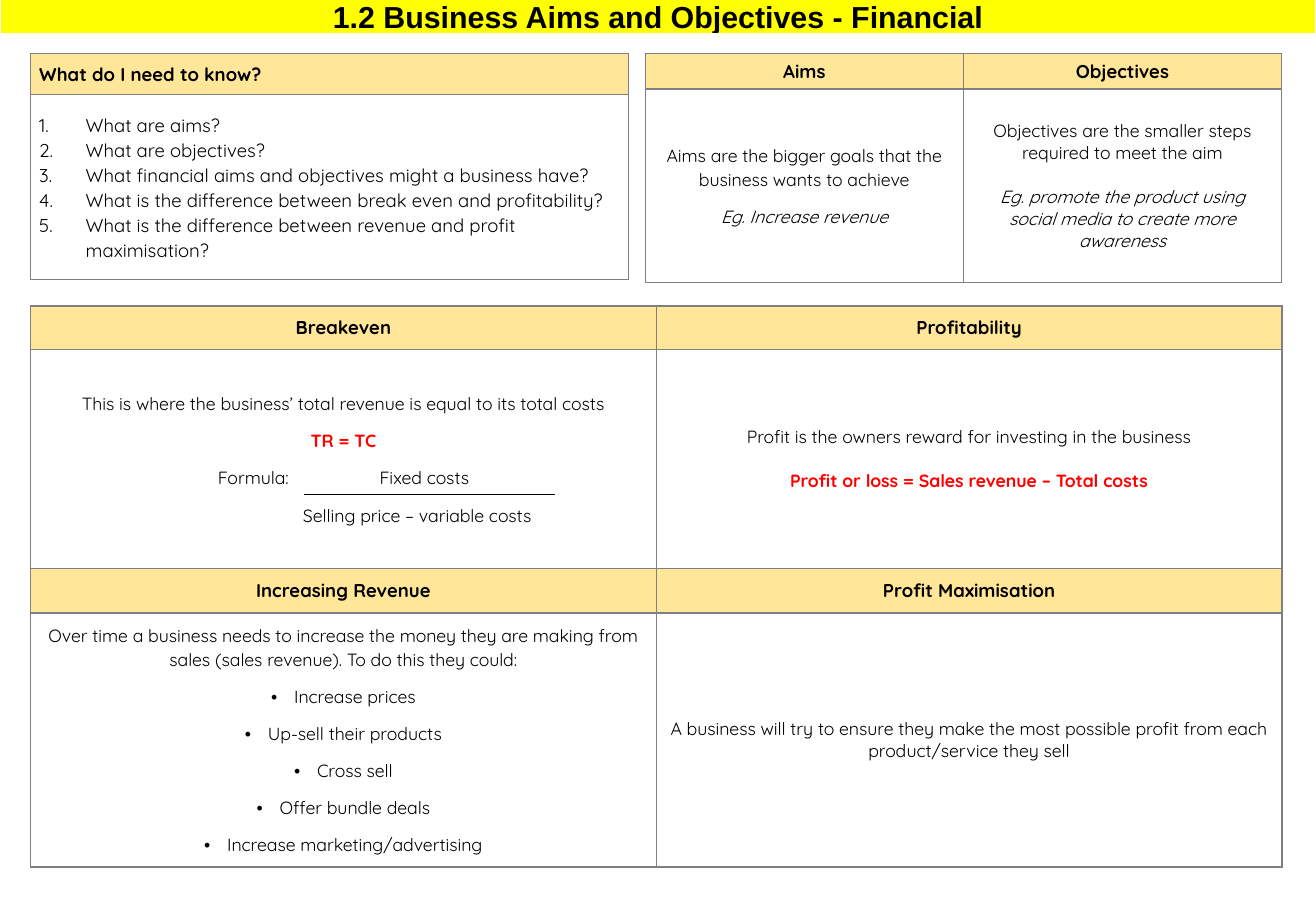
from dataclasses import dataclass

from lxml.etree import SubElement
from pptx import Presentation
from pptx.dml.color import RGBColor
from pptx.enum.shapes import MSO_CONNECTOR
from pptx.enum.text import MSO_ANCHOR as Anchor, PP_ALIGN as Align
from pptx.oxml.ns import qn
from pptx.util import Cm, Pt


@dataclass(frozen=True)
class Theme:
    black: RGBColor = RGBColor(0, 0, 0)
    white: RGBColor = RGBColor(255, 255, 255)
    red: RGBColor = RGBColor(255, 0, 0)
    yellow: RGBColor = RGBColor(255, 255, 0)
    header: RGBColor = RGBColor(0xFF, 0xE6, 0x99)
    border: RGBColor = RGBColor(128, 128, 128)
    title_font: str = "Arial"
    font: str = "Quicksand"
    title_size: float = 18
    heading_size: float = 11
    body_size: float = 10.5


THEME = Theme()
LOOSE = {"line_spacing": 1.07, "after": 8}
BLANK_LINE = 13
LEFT = Cm(0.64)
TOP = Cm(1.12)


def add_text(cell, text, *, size=THEME.body_size, font=THEME.font, color=THEME.black,
             bold=False, italic=False, align=Align.CENTER, line_spacing=1.0, after=0,
             bullet=None, hanging=0, tabs=()):
    """Fill the cell's empty first paragraph, or add another one."""
    frame = cell.text_frame
    paragraph = frame.paragraphs[0]
    if paragraph.runs:
        paragraph = frame.add_paragraph()
    paragraph.alignment = align
    paragraph.line_spacing = line_spacing
    paragraph.space_before = Pt(0)
    paragraph.space_after = Pt(after)

    run = paragraph.add_run()
    run.text = text
    run.font.name = font
    run.font.size = Pt(size)
    run.font.bold = bold
    run.font.italic = italic
    run.font.color.rgb = color

    properties = paragraph._p.get_or_add_pPr()
    if bullet:
        properties.set("marL", str(Cm(hanging)))
        properties.set("indent", str(-Cm(hanging)))
        if bullet == "number":
            SubElement(properties, qn("a:buAutoNum"), type="arabicPeriod")
        else:
            SubElement(properties, qn("a:buFont"), typeface="Arial")
            SubElement(properties, qn("a:buChar"), char=bullet)
    if tabs:
        tab_list = SubElement(properties, qn("a:tabLst"))
        for position in tabs:
            SubElement(tab_list, qn("a:tab"), pos=str(Cm(position)), algn="l")


def set_borders(cell, color, bottom_width=1):
    properties = cell._tc.get_or_add_tcPr()
    for side in "LRTB":
        width = bottom_width if side == "B" else 1
        line = SubElement(properties, qn(f"a:ln{side}"), w=str(Pt(width)))
        fill = SubElement(line, qn("a:solidFill"))
        SubElement(fill, qn("a:srgbClr"), val=str(color))


def add_grid(slide, left, top, columns, rows, *, tight=False,
             border=THEME.border, bottom_width=1):
    """Add a bordered table without fills; column and row sizes are in centimetres."""
    table = slide.shapes.add_table(len(rows), len(columns), left, top,
                                   Cm(sum(columns)), Cm(sum(rows))).table
    table.first_row = False
    table.horz_banding = False
    for column, width in zip(table.columns, columns):
        column.width = Cm(width)
    for row, height in zip(table.rows, rows):
        row.height = Cm(height)
    for cell in table.iter_cells():
        cell.vertical_anchor = Anchor.MIDDLE
        if tight:
            cell.margin_left = cell.margin_right = Cm(0.18)
            cell.margin_top = cell.margin_bottom = 0
        set_borders(cell, border, bottom_width)
        cell.fill.background()
    return table


def fill_cell(cell, color):
    cell.fill.solid()
    cell.fill.fore_color.rgb = color


def add_heading(cell, text, **text_format):
    fill_cell(cell, THEME.header)
    add_text(cell, text, size=THEME.heading_size, bold=True, **text_format)


def add_title(slide):
    table = add_grid(slide, 0, Cm(-0.03), [27.51], [0.64], tight=True,
                     border=THEME.white, bottom_width=3)
    cell = table.cell(0, 0)
    cell.vertical_anchor = Anchor.TOP
    fill_cell(cell, THEME.yellow)
    add_text(cell, "1.2 Business Aims and Objectives - Financial", font=THEME.title_font,
             size=THEME.title_size, bold=True, line_spacing=1.07)


def add_questions(slide):
    table = add_grid(slide, LEFT, TOP, [12.5], [0.86, 3.86], tight=True)
    add_heading(table.cell(0, 0), "What do I need to know?", align=Align.LEFT,
                line_spacing=1.07)
    for question in (
        "What are aims?",
        "What are objectives?",
        "What financial aims and objectives might a business have?",
        "What is the difference between break even and profitability?",
        "What is the difference between revenue and profit maximisation?",
    ):
        add_text(table.cell(1, 0), question, size=THEME.heading_size, align=Align.LEFT,
                 line_spacing=1.07, bullet="number", hanging=0.97)


def add_aims_and_objectives(slide):
    table = add_grid(slide, Cm(13.49), TOP, [6.65] * 2, [0.71, 4.04])
    for column, heading in enumerate(("Aims", "Objectives")):
        add_heading(table.cell(0, column), heading)

    aims, objectives = table.cell(1, 0), table.cell(1, 1)
    add_text(aims, "Aims are the bigger goals that the business wants to achieve", **LOOSE)
    add_text(aims, "Eg. Increase revenue", italic=True, **LOOSE)
    add_text(objectives, "Objectives are the smaller steps required to meet the aim",
             after=BLANK_LINE)
    add_text(objectives, "Eg. promote the product using social media to create more awareness",
             italic=True)


def add_financial_aims(slide):
    table = add_grid(slide, LEFT, Cm(6.4), [13.08] * 2, [0.91, 4.58, 0.93, 5.31])
    headings = ("Breakeven", "Profitability", "Increasing Revenue", "Profit Maximisation")
    for index, heading in enumerate(headings):
        add_heading(table.cell(index // 2 * 2, index % 2), heading)

    breakeven, profitability = table.cell(1, 0), table.cell(1, 1)
    add_text(breakeven, "This is where the business’ total revenue is equal to its total costs",
             **LOOSE)
    add_text(breakeven, "TR = TC", color=THEME.red, bold=True, **LOOSE)
    add_text(breakeven, "\tFormula:\tFixed costs", align=Align.LEFT, tabs=(3.66, 7.04), **LOOSE)
    add_text(breakeven, "\tSelling price – variable costs", align=Align.LEFT, tabs=(5.44,),
             **LOOSE)

    add_text(profitability, "Profit is the owners reward for investing in the business",
             after=BLANK_LINE)
    add_text(profitability, "Profit or loss = Sales revenue – Total costs",
             color=THEME.red, bold=True)

    revenue, maximisation = table.cell(3, 0), table.cell(3, 1)
    add_text(revenue, "Over time a business needs to increase the money they are making from "
             "sales (sales revenue). To do this they could:", **LOOSE)
    for method in ("Increase prices", "Up-sell their products", "Cross sell",
                   "Offer bundle deals", "Increase marketing/advertising"):
        add_text(revenue, method, bullet="•", hanging=0.48, **LOOSE)
    add_text(maximisation, "A business will try to ensure they make the most possible profit "
             "from each product/service they sell")


def add_fraction_bar(slide):
    height = Cm(10.34)
    bar = slide.shapes.add_connector(MSO_CONNECTOR.STRAIGHT, Cm(6.35), height,
                                     Cm(11.61), height)
    bar.line.color.rgb = THEME.black
    bar.line.width = Pt(0.5)
    SubElement(bar._element.spPr, qn("a:effectLst"))


def main():
    presentation = Presentation()
    presentation.slide_width = Cm(27.51)
    presentation.slide_height = Cm(19.05)
    slide = presentation.slides.add_slide(presentation.slide_layouts[6])
    add_title(slide)
    add_questions(slide)
    add_aims_and_objectives(slide)
    add_financial_aims(slide)
    add_fraction_bar(slide)
    presentation.save("out.pptx")


if __name__ == "__main__":
    main()
